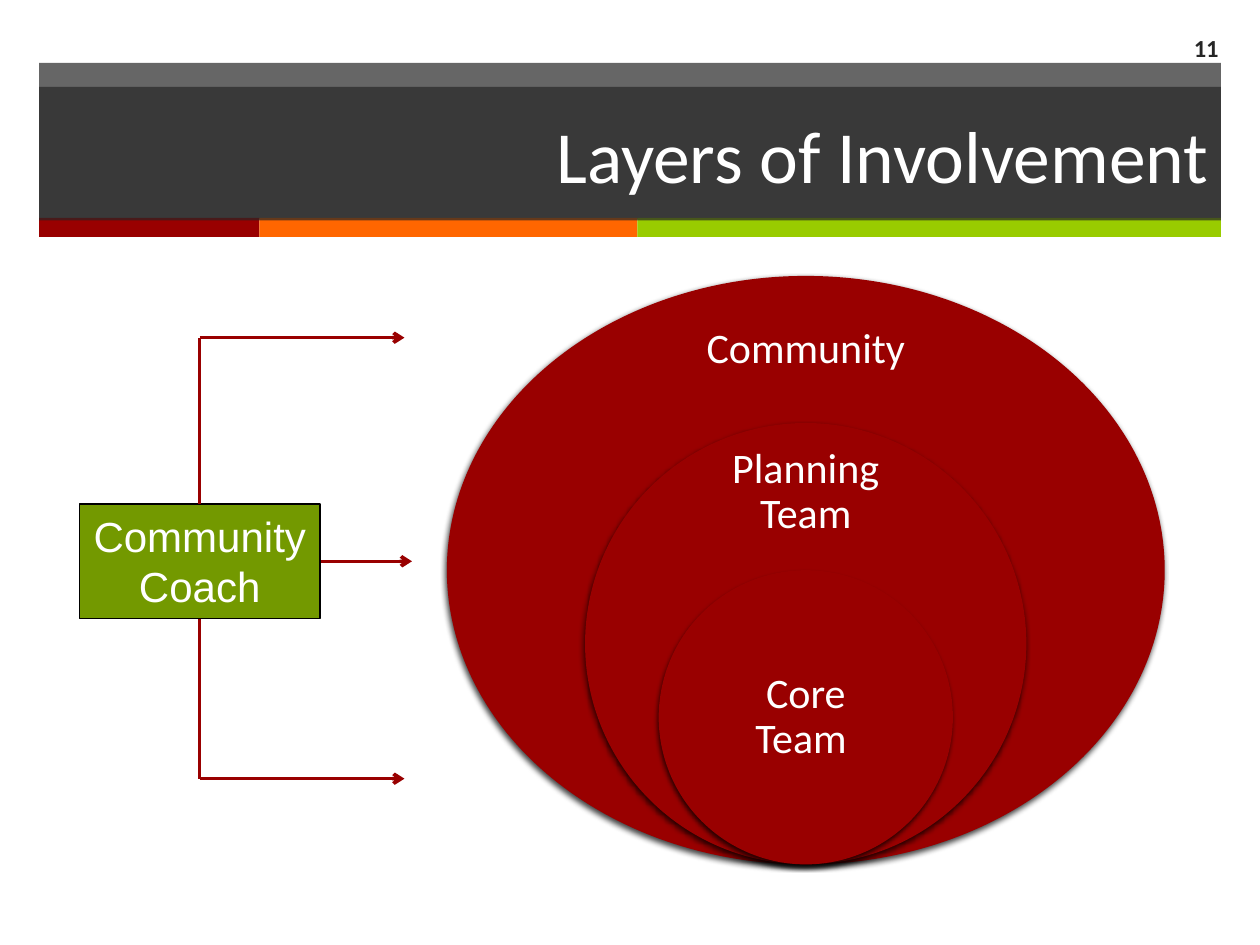
from dataclasses import dataclass

from lxml.etree import SubElement
from pptx import Presentation
from pptx.dml.color import RGBColor
from pptx.enum.shapes import MSO_CONNECTOR as Line, MSO_SHAPE as Shape
from pptx.enum.text import MSO_ANCHOR as Anchor, MSO_AUTO_SIZE as AutoSize, PP_ALIGN as Align
from pptx.oxml.ns import qn
from pptx.util import Inches, Pt


@dataclass(frozen=True)
class Theme:
    dark: str = "262626"
    red: str = "990000"
    orange: str = "FF6600"
    lime: str = "99CC00"
    green: str = "739900"
    white: str = "FFFFFF"
    black: str = "000000"
    font: str = "Calibri"
    coach_font: str = "Arial"
    title_size: int = 42
    body_size: int = 24
    number_size: int = 14


T = Theme()
WIDTH, HEIGHT = Inches(10), Inches(7.5)
COLS, ROWS = 100, 75


def col(n):
    return round(WIDTH * n / COLS)


def row(n):
    return round(HEIGHT * n / ROWS)


def cells(x, y, w, h):
    return col(x), row(y), col(w), row(h)


def add_text(sp, *lines, size=T.body_size, color=T.white, font=T.font, bold=False,
             align=Align.CENTER, anchor=Anchor.MIDDLE, spacing=None, inset=None, wrap=True):
    tf = sp.text_frame
    tf.word_wrap = wrap
    tf.vertical_anchor = anchor
    if inset is not None:
        tf.margin_left = tf.margin_right = tf.margin_top = tf.margin_bottom = inset
    for i, line in enumerate(lines):
        p = tf.paragraphs[0] if i == 0 else tf.add_paragraph()
        p.alignment = align
        p.line_spacing = spacing
        r = p.add_run()
        r.text = line
        r.font.size, r.font.name, r.font.bold = Pt(size), font, bold
        r.font.color.rgb = RGBColor.from_string(color)


def add_block(s, box, fill, kind=Shape.RECTANGLE, alpha=None, outline=None):
    sp = s.shapes.add_shape(kind, *cells(*box))
    sp.shadow.inherit = False
    sp.fill.solid()
    sp.fill.fore_color.rgb = RGBColor.from_string(fill)
    if alpha is not None:
        clr = sp.fill._xPr.find(qn("a:solidFill"))[0]
        SubElement(clr, qn("a:alpha"), val=str(alpha * 1000))
    if outline:
        sp.line.color.rgb = RGBColor.from_string(outline)
        sp.line.width = Pt(0.75)
    else:
        sp.line.fill.background()
    return sp


def add_shadow(sp, alpha=75, blur=3, dist=2, angle=110):
    effects = sp._element.spPr.find(qn("a:effectLst"))
    shadow = SubElement(effects, qn("a:outerShdw"), blurRad=str(Pt(blur)), dist=str(Pt(dist)),
                        dir=str(angle * 60000), rotWithShape="0")
    clr = SubElement(shadow, qn("a:srgbClr"), val=T.black)
    SubElement(clr, qn("a:alpha"), val=str(alpha * 1000))


def add_line(s, x1, y1, x2, y2, arrow=False):
    ln = s.shapes.add_connector(Line.STRAIGHT, col(x1), row(y1), col(x2), row(y2))
    ln.line.color.rgb = RGBColor.from_string(T.red)
    ln.line.width = Pt(2)
    if arrow:
        SubElement(ln.line._get_or_add_ln(), qn("a:tailEnd"), type="arrow")
    SubElement(ln._element.spPr, qn("a:effectLst"))
    return ln


def add_header(s, title, number):
    left, width = 3.1, 93.8
    add_block(s, (left, 5, width, 12.4), T.dark, alpha=70)
    x = left
    for w, color in ((17.5, T.red), (30, T.orange), (46.3, T.lime)):
        add_block(s, (x, 17.3, w, 1.5), color)
        x += w
    bar = add_block(s, (left, 6.9, width, 10.6), T.dark, alpha=70)
    add_text(bar, title, size=T.title_size, align=Align.RIGHT)
    tb = s.shapes.add_textbox(*cells(90.8, 1.8, 6.9, 3.9))
    add_text(tb, number, size=T.number_size, color=T.dark, bold=True, align=Align.RIGHT)


def add_layers(s, layers):
    """Nested ellipses that share a centre line and a bottom; heights shrink by quarters."""
    center, bottom, full = 63.95, 68.6, 46.7
    for i, (label, aspect, label_y, label_w, label_h) in enumerate(layers):
        h = full * (4 - i) / 4
        w = h * aspect
        add_shadow(add_block(s, (center - w / 2, bottom - h, w, h), T.red, Shape.OVAL))
        tb = s.shapes.add_textbox(*cells(center - label_w / 2, label_y, label_w, label_h))
        add_text(tb, label, spacing=0.9, inset=Inches(0.19))


def add_coach(s):
    """The coach's box with arrows that reach each layer."""
    x, y, w, h = 6.3, 40, 19.1, 9.1
    mid, tip = x + w / 2, 32.1
    add_line(s, 16.5, y + h / 2, 32.7, y + h / 2, arrow=True)
    box = add_block(s, (x, y, w, h), T.green, outline=T.black)
    add_text(box, "Community", "Coach", font=T.coach_font, anchor=Anchor.TOP, wrap=False)
    box.text_frame.auto_size = AutoSize.SHAPE_TO_FIT_TEXT
    for site, start, end in ((0, y, 26.8), (2, y + h, 61.8)):
        add_line(s, mid, start, mid, end).begin_connect(box, site)
        add_line(s, mid, end, tip, end, arrow=True)


def main():
    prs = Presentation()
    prs.slide_width, prs.slide_height = WIDTH, HEIGHT
    s = prs.slides.add_slide(prs.slide_layouts[6])
    add_header(s, "Layers of Involvement", "11")
    add_layers(s, (
        ("Community", 1.22, 24.3, 19.9, 7),
        ("Planning Team", 1, 35.8, 16.3, 6.6),
        ("Core Team ", 1, 51.1, 16.5, 11.7),
    ))
    add_coach(s)
    prs.save("out.pptx")


if __name__ == "__main__":
    main()
